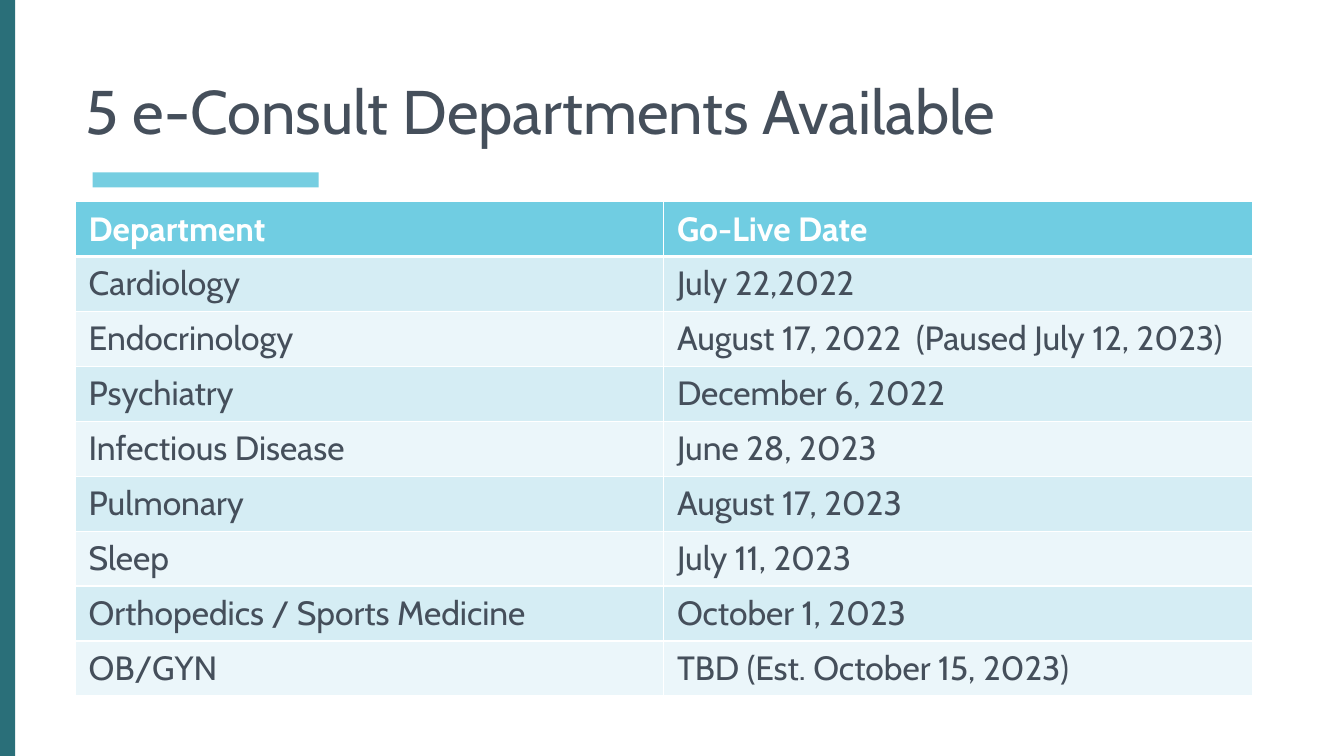
from lxml.etree import SubElement
from pptx import Presentation
from pptx.dml.color import RGBColor
from pptx.enum.shapes import MSO_SHAPE
from pptx.enum.text import MSO_ANCHOR, PP_ALIGN
from pptx.oxml.ns import qn
from pptx.util import Inches, Pt

COLORS = {
    "edge": "2A6F79",
    "accent": "76CEE1",
    "header": "70CDE2",
    "odd_row": "D5EDF4",
    "even_row": "EBF6FA",
    "ink": "454F5B",
    "white": "FFFFFF",
}
FONT = "Cabin"
WIDTH, HEIGHT = 13.33, 7.5
MARGIN = 0.75
CONTENT_WIDTH = 11.67

SCHEDULE = [
    ("Department", "Go-Live Date"),
    ("Cardiology", "July 22,2022"),
    ("Endocrinology", "August 17, 2022  (Paused July 12, 2023)"),
    ("Psychiatry", "December 6, 2022"),
    ("Infectious Disease", "June 28, 2023"),
    ("Pulmonary", "August 17, 2023"),
    ("Sleep", "July 11, 2023"),
    ("Orthopedics / Sports Medicine", "October 1, 2023"),
    ("OB/GYN", "TBD (Est. October 15, 2023)"),
]


def rgb(name):
    return RGBColor.from_string(COLORS[name])


def add_run(paragraph, text, size, color, bold=False):
    run = paragraph.add_run()
    run.text = text
    run.font.name = FONT
    run.font.size = Pt(size)
    run.font.bold = bold
    run.font.color.rgb = rgb(color)


def add_bar(slide, box, color):
    bar = slide.shapes.add_shape(MSO_SHAPE.RECTANGLE, *map(Inches, box))
    bar.shadow.inherit = False
    bar.fill.solid()
    bar.fill.fore_color.rgb = rgb(color)
    bar.line.fill.background()


def place_title(slide, box, text):
    title = slide.shapes.title
    title.left, title.top, title.width, title.height = map(Inches, box)
    frame = title.text_frame
    frame.word_wrap = True
    frame.vertical_anchor = MSO_ANCHOR.BOTTOM
    paragraph = frame.paragraphs[0]
    paragraph.alignment = PP_ALIGN.LEFT
    paragraph.line_spacing = 0.9
    add_run(paragraph, text, 44, "ink")


def set_borders(cell, widths):
    """Draw white borders; widths are points for left, right, top and bottom."""
    properties = cell._tc.get_or_add_tcPr()
    for position, (side, width) in enumerate(zip("LRTB", widths)):
        border = SubElement(properties, qn(f"a:ln{side}"), w=str(Pt(width)))
        fill = SubElement(border, qn("a:solidFill"))
        SubElement(fill, qn("a:srgbClr"), val=COLORS["white"])
        properties.insert(position, border)  # borders come before the cell fill


def add_schedule(slide, box, rows):
    left, top, width, height = map(Inches, box)
    columns = len(rows[0])
    table = slide.shapes.add_table(len(rows), columns, left, top, width, height).table
    for column in table.columns:
        column.width = width // columns
    for index, entries in enumerate(rows):
        table.rows[index].height = height // len(rows)
        is_header = index == 0
        fill = "header" if is_header else ("even_row", "odd_row")[index % 2]
        for column, text in enumerate(entries):
            cell = table.cell(index, column)
            cell.margin_left = cell.margin_right = Inches(0.13)
            cell.margin_top = cell.margin_bottom = Inches(0.07)
            cell.fill.solid()
            cell.fill.fore_color.rgb = rgb(fill)
            set_borders(cell, (1, 1, 3 if index == 1 else 1, 3 if is_header else 1))
            add_run(cell.text_frame.paragraphs[0], text, 24,
                    "white" if is_header else "ink", is_header)


def main():
    deck = Presentation()
    deck.slide_width, deck.slide_height = Inches(WIDTH), Inches(HEIGHT)
    slide = deck.slides.add_slide(deck.slide_layouts[5])
    add_bar(slide, (0, 0, 0.15, HEIGHT), "edge")
    add_bar(slide, (0.92, 1.71, 2.24, 0.15), "accent")
    place_title(slide, (MARGIN, 0.15, CONTENT_WIDTH, 1.37),
                "5 e-Consult Departments Available")
    add_schedule(slide, (MARGIN, 2, CONTENT_WIDTH, 4.87), SCHEDULE)
    deck.save("out.pptx")


if __name__ == "__main__":
    main()
